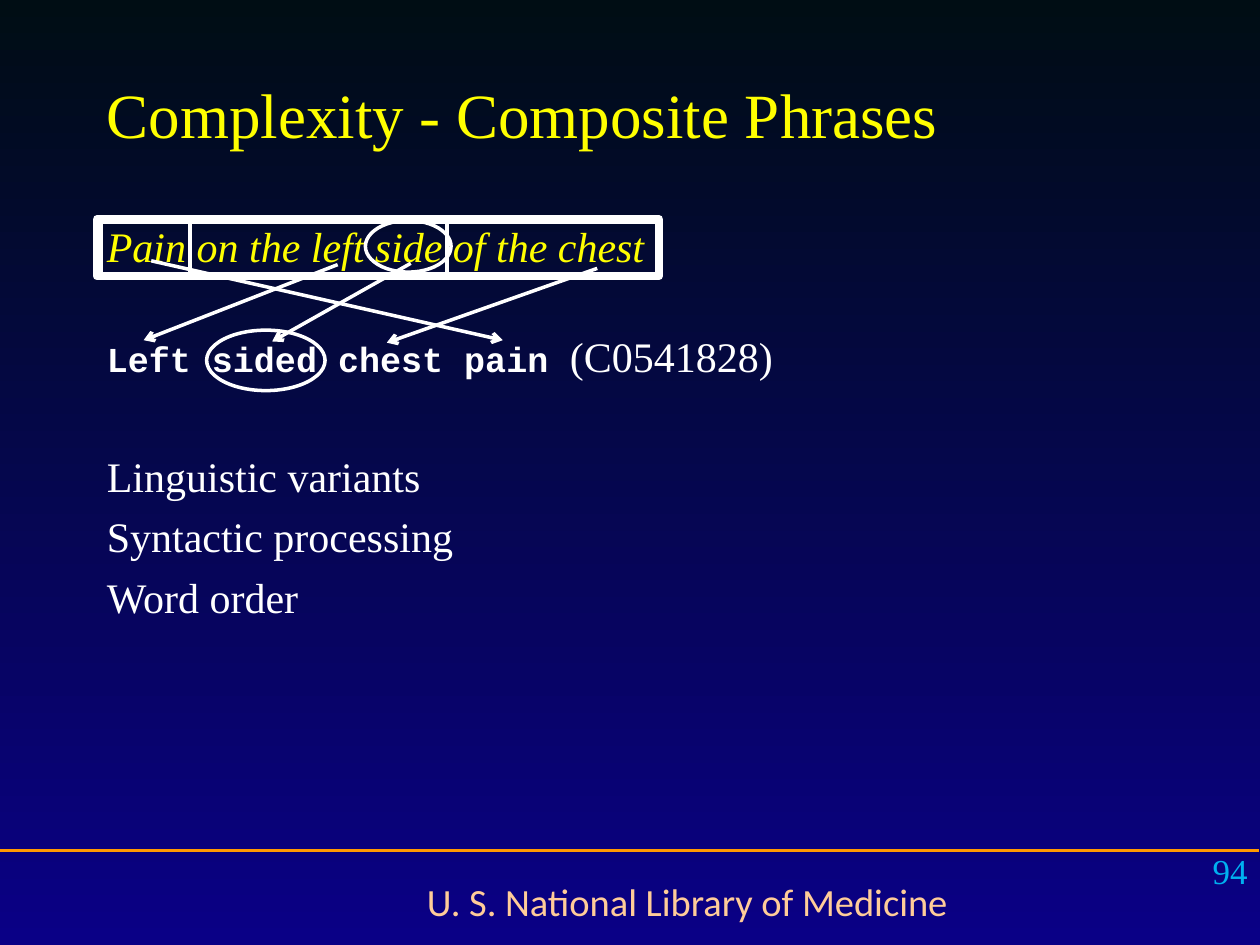
from lxml.etree import SubElement
from pptx import Presentation
from pptx.dml.color import RGBColor
from pptx.enum.shapes import MSO_CONNECTOR as LINE, MSO_SHAPE as SHAPE
from pptx.enum.text import MSO_ANCHOR as ANCHOR, PP_ALIGN as ALIGN
from pptx.oxml.ns import qn
from pptx.util import Inches, Pt

HUE = {"top": "000D14", "base": "0A0086", "rule": "FF9900", "foot": "FFCC99",
       "head": "FFFF00", "text": "FFFFFF", "page": "00B0F0"}
SERIF, MONO, SANS = "Times New Roman", "Courier New", "Calibri"

# Content: a run is (text, font, size, colour, style)
TITLE = ("Complexity - Composite Phrases", SERIF, 36, "head", "")
FOOT = ("U. S. National Library of Medicine", SANS, 22, "foot", "")
PAGE = ("94", SERIF, 20, "page", "")
# Body lines: (space before, runs)
BODY = [
    (0, [("Pain on the left side of the chest", SERIF, 24, "head", "i")]),
    (34, [("Left sided chest pain ", MONO, 20, "text", "b"),
          ("(C0541828)", SERIF, 24, "text", "")]),
    (39.8, [("Linguistic variants", SERIF, 24, "text", "")]),
    (5.8, [("Syntactic processing", SERIF, 24, "text", "")]),
    (5.8, [("Word order", SERIF, 24, "text", "")]),
]
# Phrase parts lie side by side between these edges
EDGES = [0.8, 1.51, 3.55, 5.23]
FRAME = (0.77, 1.74, 4.46, 0.45)
# Arrows from the phrase words to the concept words
ARROWS = [((1.2, 2.07), (3.99, 2.7)), ((2.68, 2.1), (1.14, 2.7)),
          ((3.26, 2.09), (2.16, 2.71)), ((4.74, 2.13), (3.07, 2.72))]
RINGS = [(2.9, 1.75, 0.68, 0.41), (1.64, 2.62, 0.94, 0.48)]

prs = Presentation()
prs.slide_width, prs.slide_height = Inches(10), Inches(7.5)
slide = prs.slides.add_slide(prs.slide_layouts[6])
shapes = slide.shapes


def color(key):
    return RGBColor.from_string(HUE[key])


def add_text(area, lines, align=ALIGN.LEFT, anchor=ANCHOR.TOP):
    frame = shapes.add_textbox(*map(Inches, area)).text_frame
    frame.word_wrap = True
    frame.vertical_anchor = anchor
    for i, (space, runs) in enumerate(lines):
        para = frame.add_paragraph() if i else frame.paragraphs[0]
        para.alignment = align
        para.space_before = Pt(space)
        for text, face, size, key, style in runs:
            run = para.add_run()
            run.text = text
            font = run.font
            font.name, font.size = face, Pt(size)
            font.color.rgb = color(key)
            font.bold, font.italic = style == "b", style == "i"


def add_line(start, end, key, width, arrow=False):
    line = shapes.add_connector(LINE.STRAIGHT, *map(Inches, start + end))
    line.line.color.rgb = color(key)
    line.line.width = Pt(width)
    if arrow:
        SubElement(line.line._get_or_add_ln(), qn("a:tailEnd"), type="arrow")
    SubElement(line._element.spPr, qn("a:effectLst"))


def add_outline(kind, area, width=2):
    shape = shapes.add_shape(kind, *map(Inches, area))
    shape.shadow.inherit = False
    shape.fill.background()
    shape.line.color.rgb = color("text")
    shape.line.width = Pt(width)


# Background, dark at the top
fill = slide.background.fill
fill.gradient()
fill.gradient_angle = 270
for stop, key in zip(fill.gradient_stops, ("top", "base")):
    stop.color.rgb = color(key)

# Footer, title and body
add_line((-0.01, 6.75), (9.99, 6.75), "rule", 1.5)
add_text((2.32, 6.92, 6.27, 0.47), [(0, [FOOT])], ALIGN.CENTER)
add_text((0.75, 0.5, 8.5, 0.75), [(0, [TITLE])], anchor=ANCHOR.BOTTOM)
add_text((0.75, 1.7, 8.5, 4.4), BODY)

# Phrase boxes, arrows and rings
for left, right in zip(EDGES, EDGES[1:]):
    add_outline(SHAPE.RECTANGLE, (left, 1.75, right - left, 0.42))
add_outline(SHAPE.RECTANGLE, FRAME, 5)
for start, end in ARROWS:
    add_line(start, end, "text", 2, arrow=True)
for ring in RINGS:
    add_outline(SHAPE.OVAL, ring)

# Page number
add_text((7.67, 6.69, 2.33, 0.52), [(0, [PAGE])], ALIGN.RIGHT)

prs.save("out.pptx")
